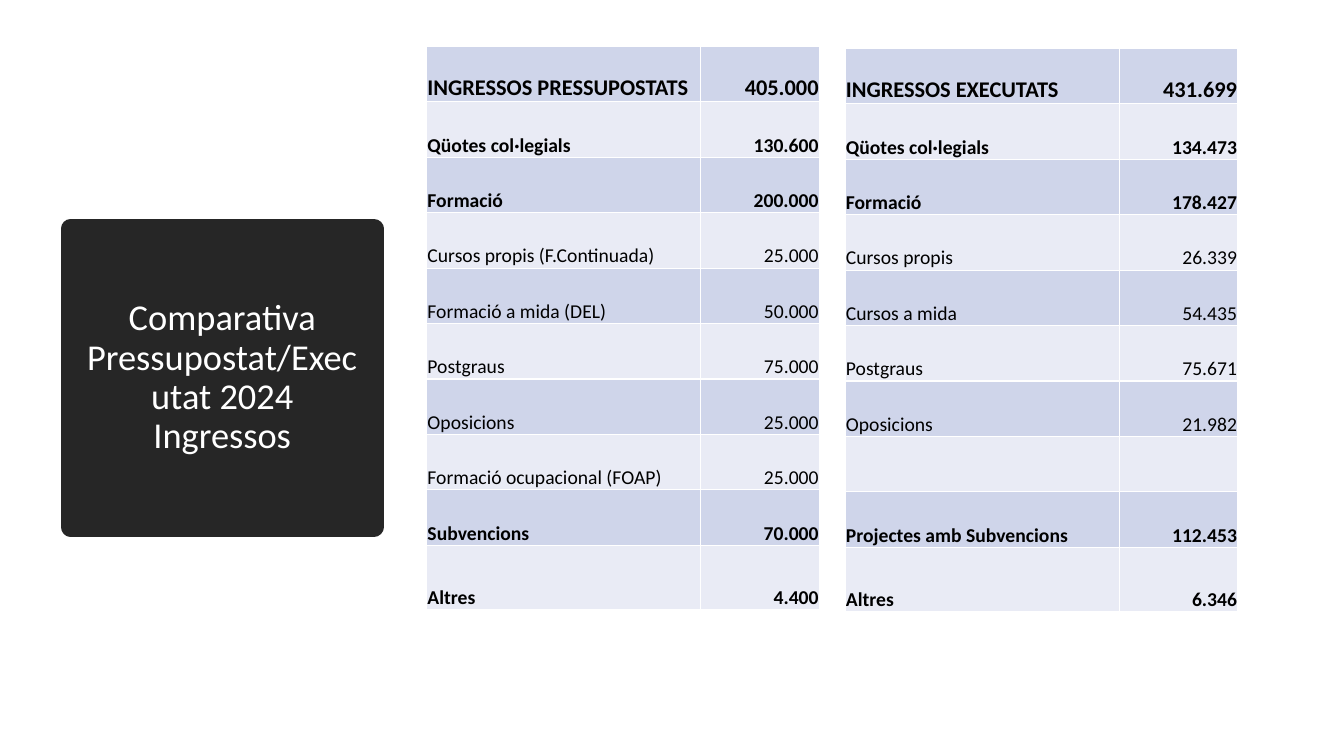
from lxml import etree
from pptx import Presentation
from pptx.dml.color import RGBColor
from pptx.enum.shapes import MSO_SHAPE
from pptx.enum.text import MSO_ANCHOR, PP_ALIGN
from pptx.oxml.ns import qn
from pptx.util import Inches, Pt

RECTANGLE = MSO_SHAPE.RECTANGLE
MIDDLE, BOTTOM = MSO_ANCHOR.MIDDLE, MSO_ANCHOR.BOTTOM
LEFT, CENTER, RIGHT = PP_ALIGN.LEFT, PP_ALIGN.CENTER, PP_ALIGN.RIGHT

COLORS = {
    "panel": "262626",
    "white": "FFFFFF",
    "text": "000000",
    "band_dark": "CFD5EA",
    "band_light": "E9EBF5",
}
FONT = "Calibri"
COLUMN_WIDTHS = (2.72, 1.18)
ROW_HEIGHT, LAST_ROW_HEIGHT = 0.55, 0.64
BOLD_ROWS = {0, 1, 2, 8, 9}

BUDGETED = [
    ("INGRESSOS PRESSUPOSTATS", "405.000"),
    ("Qüotes col·legials", "130.600"),
    ("Formació", "200.000"),
    ("Cursos propis (F.Continuada)", "25.000"),
    ("Formació a mida (DEL)", "50.000"),
    ("Postgraus", "75.000"),
    ("Oposicions", "25.000"),
    ("Formació ocupacional (FOAP)", "25.000"),
    ("Subvencions", "70.000"),
    ("Altres", "4.400"),
]
EXECUTED = [
    ("INGRESSOS EXECUTATS", "431.699"),
    ("Qüotes col·legials", "134.473"),
    ("Formació", "178.427"),
    ("Cursos propis", "26.339"),
    ("Cursos a mida", "54.435"),
    ("Postgraus", "75.671"),
    ("Oposicions", "21.982"),
    ("", ""),
    ("Projectes amb Subvencions", "112.453"),
    ("Altres", "6.346"),
]


def color(name):
    return RGBColor.from_string(COLORS[name])


def add_cell_borders(cell):
    """Draw 1 pt white lines on all four sides; call before setting the fill."""
    properties = cell._tc.get_or_add_tcPr()
    for side in ("a:lnL", "a:lnR", "a:lnT", "a:lnB"):
        line = etree.SubElement(properties, qn(side), w=str(Pt(1)))
        fill = etree.SubElement(line, qn("a:solidFill"))
        etree.SubElement(fill, qn("a:srgbClr"), val=COLORS["white"])


presentation = Presentation()
presentation.slide_width = Inches(13.33)
presentation.slide_height = Inches(7.5)
slide = presentation.slides.add_slide(presentation.slide_layouts[6])

# Title panel: the thick line with round joins gives the soft corners
panel = slide.shapes.add_shape(RECTANGLE, Inches(0.7), Inches(2.27), Inches(3.01), Inches(2.96))
panel.shadow.inherit = False
panel.fill.solid()
panel.fill.fore_color.rgb = color("panel")
panel.line.color.rgb = color("panel")
panel.line.width = Pt(13.75)
etree.SubElement(panel.line._get_or_add_ln(), qn("a:round"))
panel.text_frame.word_wrap = True
panel.text_frame.vertical_anchor = MIDDLE
title = panel.text_frame.paragraphs[0]
title.text = "Comparativa Pressupostat/Executat 2024\vIngressos"
title.alignment = CENTER
title.line_spacing = 0.9
title.font.name = FONT
title.font.size = Pt(26)
title.font.color.rgb = color("white")

# Income tables
for left, top, rows in ((4.23, 0.46, BUDGETED), (8.38, 0.48, EXECUTED)):
    height = ROW_HEIGHT * (len(rows) - 1) + LAST_ROW_HEIGHT
    table = slide.shapes.add_table(
        len(rows), len(COLUMN_WIDTHS),
        Inches(left), Inches(top), Inches(sum(COLUMN_WIDTHS)), Inches(height),
    ).table
    table.first_row = False
    table.horz_banding = False
    for column, width in zip(table.columns, COLUMN_WIDTHS):
        column.width = Inches(width)
    for row in table.rows:
        row.height = Inches(ROW_HEIGHT)
    table.rows[len(rows) - 1].height = Inches(LAST_ROW_HEIGHT)

    for row_index, values in enumerate(rows):
        band = "band_light" if row_index % 2 else "band_dark"
        for column_index, value in enumerate(values):
            cell = table.cell(row_index, column_index)
            add_cell_borders(cell)
            cell.fill.solid()
            cell.fill.fore_color.rgb = color(band)
            cell.vertical_anchor = BOTTOM
            cell.margin_left = cell.margin_right = cell.margin_top = Inches(0.01)
            cell.margin_bottom = 0
            paragraph = cell.text_frame.paragraphs[0]
            paragraph.text = value
            paragraph.alignment = RIGHT if column_index else LEFT
            paragraph.font.name = FONT
            paragraph.font.size = Pt(14 if row_index else 16)
            paragraph.font.bold = row_index in BOLD_ROWS
            paragraph.font.color.rgb = color("text")

presentation.save("out.pptx")
